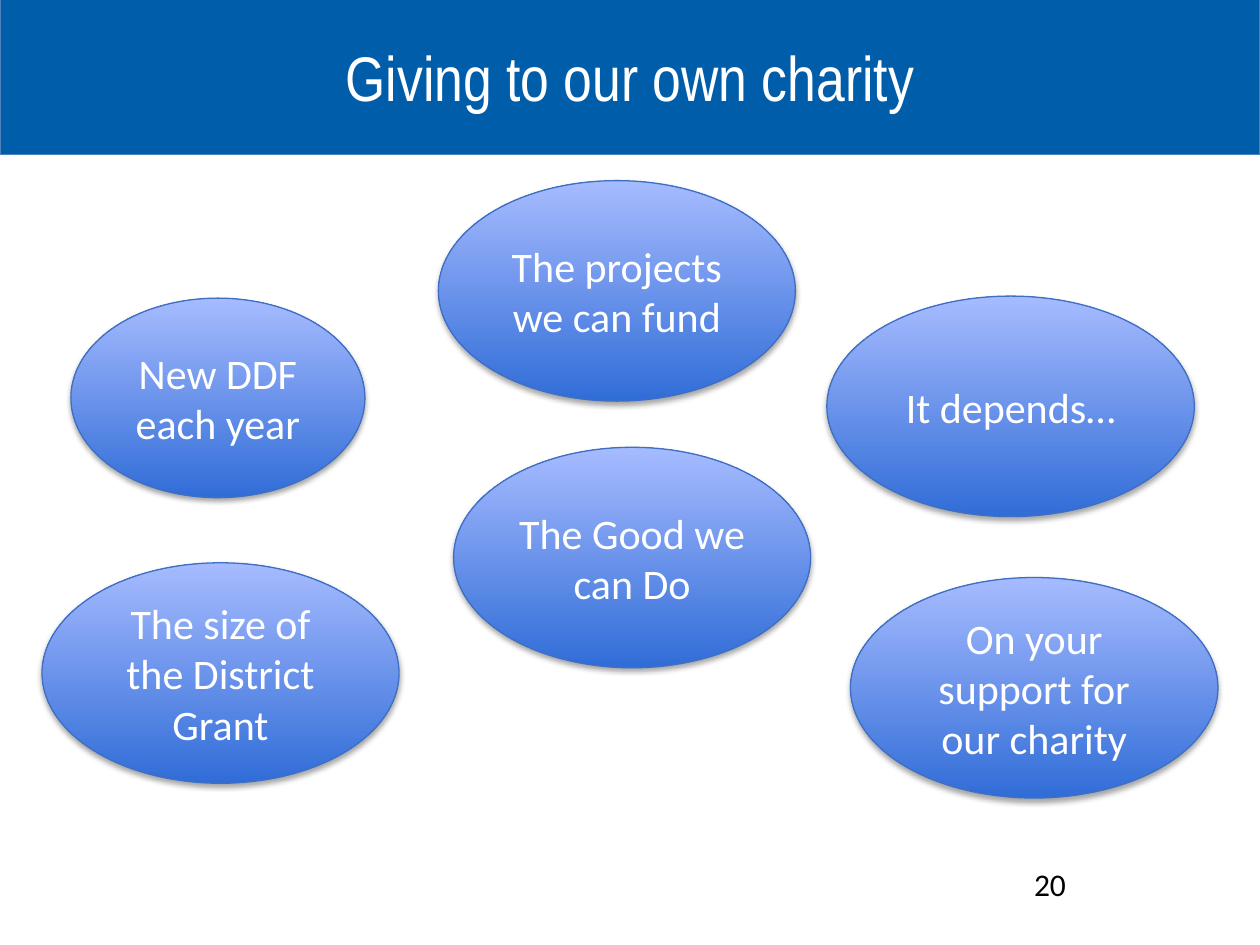
from lxml import etree
from pptx import Presentation, util as u
from pptx.dml.color import RGBColor
from pptx.enum import shapes, text
from pptx.oxml.ns import qn

COLUMNS, ROWS = 120, 90


def color(value):
    return RGBColor.from_string(value)


class Deck:
    """Style and current slide; places are (column, row, columns, rows)."""
    body_font, title_font = "Calibri", "Arial Narrow"
    banner_fill, banner_line = "005DAA", "4F81BD"
    bubble_bottom, bubble_top, bubble_line = "316DD7", "A6BBFF", "3F6FC3"
    white, black = "FFFFFF", "000000"

    def __init__(self):
        self.prs = Presentation()
        self.prs.slide_width, self.prs.slide_height = u.Inches(10), u.Inches(7.5)
        self.slide = self.prs.slides.add_slide(self.prs.slide_layouts[6])

    def box(self, place):
        units = (self.prs.slide_width / COLUMNS, self.prs.slide_height / ROWS) * 2
        return [round(n * unit) for n, unit in zip(place, units)]

    def set_words(self, shape, words, size, font, ink, anchor):
        frame = shape.text_frame
        frame.word_wrap = True
        frame.vertical_anchor = anchor
        paragraph = frame.paragraphs[0]
        paragraph.text = words
        paragraph.alignment = text.PP_ALIGN.CENTER
        paragraph.font.size = u.Pt(size)
        paragraph.font.name = font
        paragraph.font.color.rgb = color(ink)

    def outline(self, shape, ink):
        shape.line.color.rgb = color(ink)
        shape.line.width = u.Pt(0.75)
        shape.shadow.inherit = False

    def banner(self, place):
        band = self.slide.shapes.add_shape(shapes.MSO_SHAPE.RECTANGLE, *self.box(place))
        band.fill.solid()
        band.fill.fore_color.rgb = color(self.banner_fill)
        self.outline(band, self.banner_line)

    def label(self, words, place, size, font, ink, anchor):
        self.set_words(self.slide.shapes.add_textbox(*self.box(place)),
                       words, size, font, ink, anchor)

    def bubble(self, words, place):
        oval = self.slide.shapes.add_shape(shapes.MSO_SHAPE.OVAL, *self.box(place))
        oval.fill.gradient()
        oval.fill.gradient_angle = 90
        shades = (self.bubble_bottom, self.bubble_top)
        for position, (stop, ink) in enumerate(zip(oval.fill.gradient_stops, shades)):
            stop.color.rgb = color(ink)
            stop.position = position
        self.outline(oval, self.bubble_line)
        self.drop_shadow(oval)
        self.set_words(oval, words, 24, self.body_font, self.white, text.MSO_ANCHOR.MIDDLE)

    def drop_shadow(self, shape):
        effects = shape.element.spPr.find(qn("a:effectLst"))
        shadow = etree.SubElement(effects, qn("a:outerShdw"), blurRad=str(u.Pt(3.1)),
                                  dist=str(u.Pt(1.8)), dir="5400000", rotWithShape="0")
        ink = etree.SubElement(shadow, qn("a:srgbClr"), val=self.black)
        etree.SubElement(ink, qn("a:alpha"), val="35000")


def main():
    deck = Deck()

    # Banner, title and page number
    deck.banner((0, -0.4, 120, 15.1))
    deck.label("Giving to our own charity", (8.25, 1.6, 103.5, 11.3), 36,
               deck.title_font, deck.white, text.MSO_ANCHOR.MIDDLE)
    deck.label("20", (86, 81.8, 28, 4.8), 18,
               deck.body_font, deck.black, text.MSO_ANCHOR.TOP)

    # Ideas about the charity
    ideas = [
        ("It depends…", (78.75, 28.2, 35, 21)),
        ("New DDF each year", (6.75, 28.4, 28, 19)),
        ("The size of the District Grant", (4, 53.6, 34, 21)),
        ("The projects we can fund", (41.75, 17.2, 34, 21)),
        ("The Good we can Do", (43.2, 42.6, 34, 21)),
        ("On your support for our charity", (81, 55, 35, 21)),
    ]
    for words, place in ideas:
        deck.bubble(words, place)

    deck.prs.save("out.pptx")


if __name__ == "__main__":
    main()
